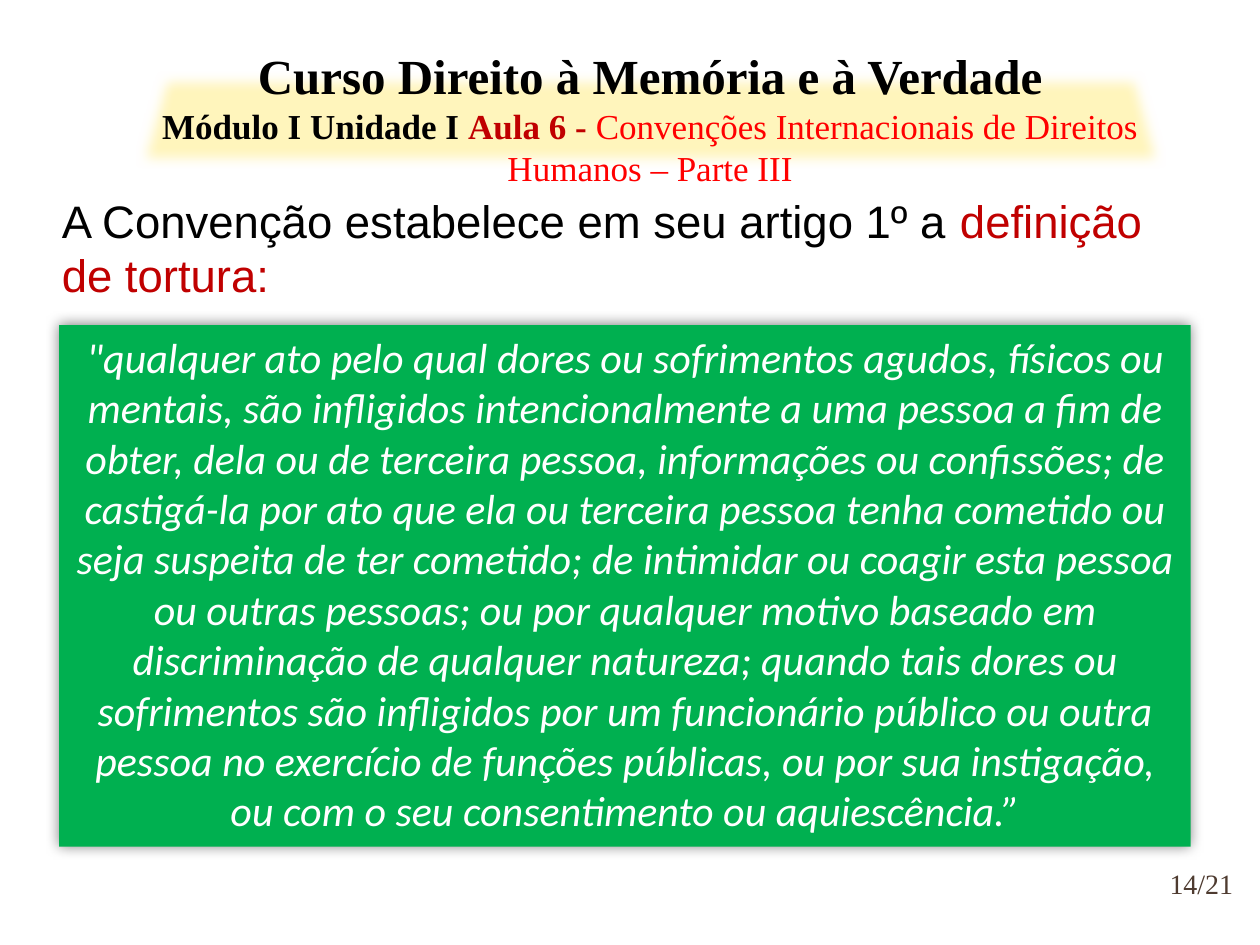
from lxml import etree
from pptx import Presentation
from pptx.dml.color import RGBColor
from pptx.enum.shapes import MSO_SHAPE
from pptx.enum.text import MSO_ANCHOR, MSO_AUTO_SIZE, PP_ALIGN
from pptx.oxml.ns import qn
from pptx.util import Inches, Pt

RECTANGLE, TRAPEZOID = MSO_SHAPE.RECTANGLE, MSO_SHAPE.TRAPEZOID
CENTER, LEFT = PP_ALIGN.CENTER, PP_ALIGN.LEFT
TOP, MIDDLE = MSO_ANCHOR.TOP, MSO_ANCHOR.MIDDLE
NO_AUTOFIT = MSO_AUTO_SIZE.NONE
SERIF, SANS, QUOTE_FONT = "Times New Roman", "Arial", "Calibri"
BLACK, RED, DARK_RED, WHITE = "000000", "FF0000", "C00000", "FFFFFF"

DEFINITION = (
    '"qualquer ato pelo qual dores ou sofrimentos agudos, físicos ou mentais, são '
    "infligidos intencionalmente a uma pessoa a fim de obter, dela ou de terceira "
    "pessoa, informações ou confissões; de castigá-la por ato que ela ou terceira "
    "pessoa tenha cometido ou seja suspeita de ter cometido; de intimidar ou coagir "
    "esta pessoa ou outras pessoas; ou por qualquer motivo baseado em discriminação "
    "de qualquer natureza; quando tais dores ou sofrimentos são infligidos por um "
    "funcionário público ou outra pessoa no exercício de funções públicas, ou por "
    "sua instigação, ou com o seu consentimento ou aquiescência.”"
)


def color(value):
    return RGBColor.from_string(value)


def place(shape, box):
    shape.left, shape.top, shape.width, shape.height = map(Inches, box)


def prepare_frame(frame, anchor):
    frame.auto_size = NO_AUTOFIT
    frame.word_wrap = True
    frame.vertical_anchor = anchor


def write(paragraph, parts, font_name, size, align, italic=False):
    paragraph.alignment = align
    paragraph.space_before = Pt(0)
    for words, shade, bold in parts:
        run = paragraph.add_run()
        run.text = words
        run.font.name = font_name
        run.font.size = Pt(size)
        run.font.color.rgb = color(shade)
        run.font.bold = bold
        run.font.italic = italic


def add_panel(slide, preset, box, fill):
    panel = slide.shapes.add_shape(preset, *map(Inches, box))
    panel.shadow.inherit = False
    panel.fill.solid()
    panel.fill.fore_color.rgb = color(fill)
    panel.line.fill.background()
    return panel


def add_effect(shape, tag, **settings):
    effects = shape._element.spPr.find(qn("a:effectLst"))
    return etree.SubElement(effects, qn(tag), **settings)


def add_header(slide, box):
    left, top, width, height = box
    glow = add_panel(slide, TRAPEZOID, (left, top + 0.26, width, 0.77), "FFF5BC")
    glow.adjustments[0] = 0.28
    add_effect(glow, "a:softEdge", rad=str(Inches(0.1)))

    title = slide.shapes.title
    place(title, box)
    frame = title.text_frame
    prepare_frame(frame, TOP)
    write(frame.paragraphs[0], [("Curso Direito à Memória e à Verdade", BLACK, True)],
          SERIF, 28, CENTER)
    write(frame.add_paragraph(), [
        ("Módulo I Unidade I ", BLACK, True),
        ("Aula 6 - ", DARK_RED, True),
        ("Convenções Internacionais de Direitos Humanos – Parte III", RED, False),
    ], SERIF, 20, CENTER)
    slide.shapes._spTree.append(title._element)


def add_introduction(slide, box):
    body = slide.placeholders[1]
    place(body, box)
    prepare_frame(body.text_frame, TOP)
    paragraph = body.text_frame.paragraphs[0]
    properties = paragraph._p.get_or_add_pPr()
    properties.set("marL", "0")
    properties.set("indent", "0")
    etree.SubElement(properties, qn("a:buNone"))
    write(paragraph, [
        ("A Convenção estabelece em seu artigo 1º a ", BLACK, False),
        ("definição de tortura:", DARK_RED, False),
    ], SANS, 26, LEFT)


def add_definition(slide, box):
    panel = add_panel(slide, RECTANGLE, box, "00B050")
    shadow = add_effect(panel, "a:outerShdw", blurRad=str(Pt(7.5)), dist="0",
                        algn="ctr", rotWithShape="0")
    shade = etree.SubElement(shadow, qn("a:srgbClr"), val=BLACK)
    etree.SubElement(shade, qn("a:alpha"), val="50000")
    prepare_frame(panel.text_frame, TOP)
    write(panel.text_frame.paragraphs[0], [(DEFINITION, WHITE, False)],
          QUOTE_FONT, 24, CENTER, italic=True)


def add_page_number(slide, box):
    frame = slide.shapes.add_textbox(*map(Inches, box)).text_frame
    prepare_frame(frame, MIDDLE)
    frame.margin_left = frame.margin_right = 0
    frame.margin_top = frame.margin_bottom = 0
    write(frame.paragraphs[0], [("14/21", "4E3B30", False)], SERIF, 16, CENTER)


def main():
    presentation = Presentation()
    presentation.slide_width = Inches(10)
    presentation.slide_height = Inches(7.5)
    slide = presentation.slides.add_slide(presentation.slide_layouts[1])
    add_page_number(slide, (9.2, 6.76, 0.67, 0.5))
    add_introduction(slide, (0.39, 1.48, 8.98, 0.98))
    add_definition(slide, (0.47, 2.58, 8.98, 4.14))
    add_header(slide, (1.02, 0.31, 8.28, 1.25))
    presentation.save("out.pptx")


if __name__ == "__main__":
    main()
